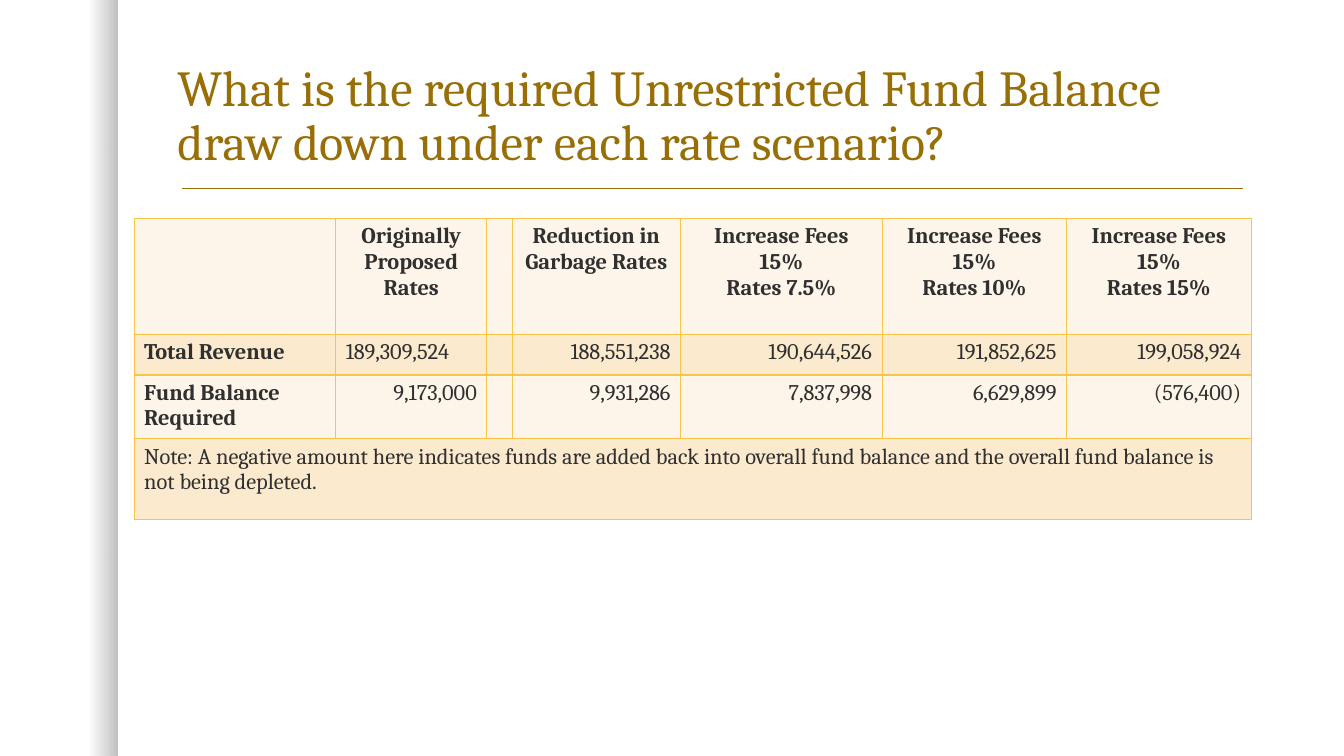
from lxml import etree
from pptx import Presentation
from pptx.dml.color import RGBColor
from pptx.enum import shapes, text
from pptx.oxml import ns
from pptx.util import Cm, Pt

GOLD = RGBColor(0x98, 0x6F, 0x07)
EDGE = RGBColor(0xF7, 0xC5, 0x47)
INK = RGBColor(0x30, 0x30, 0x30)
BLACK = RGBColor(0, 0, 0)
BANDS = RGBColor(0xFD, 0xF5, 0xE9), RGBColor(0xFC, 0xEA, 0xCF)
FONT = "Cambria"
LEFT, MID, RIGHT = text.PP_ALIGN.LEFT, text.PP_ALIGN.CENTER, text.PP_ALIGN.RIGHT

WIDTHS = 5.08, 3.81, 0.64, 4.24, 5.08, 4.65, 4.65
HEIGHTS = 2.92, 1.02, 1.02, 2.03
FEES = "Increase Fees 15%"
ROWS = [
    ["", "Originally Proposed Rates", "", "Reduction in Garbage Rates",
     f"{FEES}\nRates 7.5%", f"{FEES}\nRates 10%", f"{FEES}\nRates 15%"],
    ["Total Revenue", "189,309,524", "", "188,551,238",
     "190,644,526", "191,852,625", "199,058,924"],
    ["Fund Balance Required", "9,173,000", "", "9,931,286",
     "7,837,998", "6,629,899", "(576,400)"],
    ["Note: A negative amount here indicates funds are added back into overall "
     "fund balance and the overall fund balance is not being depleted."] + [""] * 6,
]


def add(parent, tag, **attrs):
    return etree.SubElement(parent, ns.qn(tag), **attrs)


def write(para, words, size, color, bold=False):
    run = para.add_run()
    run.text = words
    font = run.font
    font.name, font.size, font.bold = FONT, Pt(size), bold
    font.color.rgb = color


def shade(slide, x, y, w, h):
    """Soft shadow band that darkens towards its right edge."""
    band = slide.shapes.add_shape(
        shapes.MSO_SHAPE.RECTANGLE, Cm(x), Cm(y), Cm(w), Cm(h))
    band.shadow.inherit = False
    band.line.fill.background()
    band.fill.gradient()
    band.fill.gradient_angle = 0
    for stop, place, alpha in zip(band.fill.gradient_stops, (0.75, 1), (0, 25000)):
        stop.position = place
        stop.color.rgb = BLACK
    for tint, alpha in zip(band._element.spPr.iter(ns.qn("a:srgbClr")), (0, 25000)):
        add(tint, "a:alpha", val=str(alpha))


def head(slide, x, y, w, h):
    """Title with the rule below it."""
    box = slide.shapes.add_textbox(Cm(x), Cm(y), Cm(w), Cm(h))
    frame = box.text_frame
    frame.word_wrap = True
    frame.vertical_anchor = text.MSO_ANCHOR.BOTTOM
    para = frame.paragraphs[0]
    para.line_spacing = 0.9
    write(para, "What is the required Unrestricted Fund Balance "
                "draw down under each rate scenario?", 36, GOLD)

    base = Cm(y + h + 0.3)
    rule = slide.shapes.add_connector(
        shapes.MSO_CONNECTOR.STRAIGHT, Cm(x + 0.38), base, Cm(x + w - 0.2), base)
    rule.line.color.rgb = GOLD
    rule.line.width = Pt(1)
    add(rule._element.spPr, "a:effectLst")


def border(cell):
    props = cell._tc.get_or_add_tcPr()
    for side in "LRTB":
        line = add(props, f"a:ln{side}", w=str(Pt(1)))
        add(add(line, "a:solidFill"), "a:srgbClr", val=str(EDGE))


def align(row, col):
    if row == 0:
        return MID
    # The first revenue figure is set flush left
    return LEFT if col == 0 or (row, col) == (1, 1) else RIGHT


def grid(slide, x, y):
    """Table of rate scenarios with a note across the last row."""
    table = slide.shapes.add_table(
        len(ROWS), len(WIDTHS), Cm(x), Cm(y),
        Cm(sum(WIDTHS)), Cm(sum(HEIGHTS))).table
    table.first_row = table.horz_banding = False
    for col, width in zip(table.columns, WIDTHS):
        col.width = Cm(width)
    for row, height in zip(table.rows, HEIGHTS):
        row.height = Cm(height)

    for r, row in enumerate(ROWS):
        for c, words in enumerate(row):
            cell = table.cell(r, c)
            border(cell)
            cell.fill.solid()
            cell.fill.fore_color.rgb = BANDS[r % 2]
            bold = r == 0 or (c == 0 and r < 3)
            frame = cell.text_frame
            for n, part in enumerate(words.split("\n")):
                para = frame.add_paragraph() if n else frame.paragraphs[0]
                para.alignment = align(r, c)
                if part:
                    write(para, part, 16, INK, bold)
                else:
                    add(para._p, "a:endParaRPr", sz="1600")
    last = len(ROWS) - 1
    table.cell(last, 0).merge(table.cell(last, len(WIDTHS) - 1))


def main():
    deck = Presentation()
    deck.slide_width, deck.slide_height = Cm(33.87), Cm(19.05)
    slide = deck.slides.add_slide(deck.slide_layouts[6])
    shade(slide, 0, 0, 2.95, 19.05)
    head(slide, 4.22, 1.07, 27.3, 3.38)
    grid(slide, 3.38, 5.51)
    deck.save("out.pptx")


if __name__ == "__main__":
    main()
